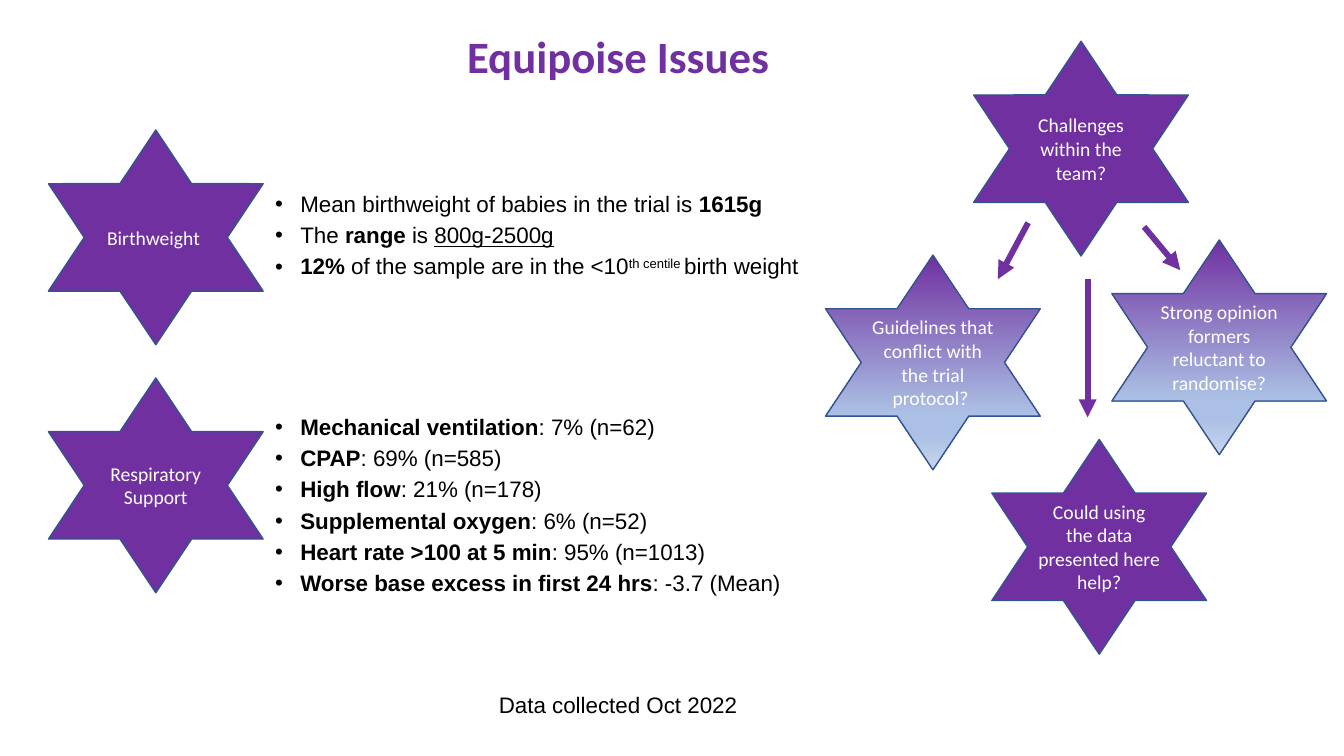
import lxml.etree
import pptx
import pptx.dml.color
import pptx.enum.dml
import pptx.enum.shapes
import pptx.enum.text
import pptx.oxml
import pptx.oxml.ns
import pptx.util

Pt = pptx.util.Pt
RGBColor = pptx.dml.color.RGBColor
qn = pptx.oxml.ns.qn
ALIGN = pptx.enum.text.PP_ALIGN

PURPLE = RGBColor(0x70, 0x30, 0xA0)
PALE_BLUE = RGBColor(0xAB, 0xC0, 0xE4)
PALEST_BLUE = RGBColor(0xC7, 0xD5, 0xED)
OUTLINE = RGBColor(0x32, 0x54, 0x91)
WHITE = RGBColor(0xFF, 0xFF, 0xFF)
BLACK = RGBColor(0, 0, 0)

FADE = [(0, PURPLE), (74, PALE_BLUE), (83, PALE_BLUE), (100, PALEST_BLUE)]
STAR_SIZE = 153.4

# Star label, left, top, faded fill
STARS = [
    ("Birthweight ", 34.6, 92.9, False),
    ("Respiratory Support", 34.6, 270, False),
    ("Challenges within the team?", 695.5, 29.5, False),
    ("Guidelines that conflict with the trial protocol? ", 589.7, 182.2, True),
    ("Strong opinion formers reluctant to randomise?", 794.2, 171.4, True),
    ("Could using the data presented here help?", 708.5, 313.9, False),
]

# Arrow start and end
ARROWS = [
    (734.4, 159.1, 712.8, 199.4),
    (817.2, 162, 843.1, 193),
    (776.9, 199.4, 776.9, 298.1),
]

# Each bullet is a list of (text, style) pieces
BIRTHWEIGHT_FACTS = [
    [("Mean birthweight of babies in the trial is ", ""), ("1615g", "bold")],
    [("The ", ""), ("range", "bold"), (" is ", ""), ("800g-2500g", "underline")],
    [("12% ", "bold"), ("of the sample are in the <10", ""),
     ("th centile ", "superscript"), ("birth weight", "")],
]
RESPIRATORY_FACTS = [
    [(measure, "bold"), (": " + result, "")]
    for measure, result in [
        ("Mechanical ventilation", "7% (n=62)"),
        ("CPAP", "69% (n=585)"),
        ("High flow", "21% (n=178)"),
        ("Supplemental oxygen", "6% (n=52)"),
        ("Heart rate >100 at 5 min", "95% (n=1013)"),
        ("Worse base excess in first 24 hrs", "-3.7 (Mean)"),
    ]
]


def format_font(font, name, size, color, bold=False):
    font.name = name
    font.size = Pt(size)
    font.color.rgb = color
    font.bold = bold


def add_text_frame(slide, left, top, width, height):
    box = slide.shapes.add_textbox(Pt(left), Pt(top), Pt(width), Pt(height))
    box.text_frame.word_wrap = True
    return box.text_frame


def add_line_of_text(slide, place, text, name, size, color, bold=False,
                     align=ALIGN.LEFT):
    frame = add_text_frame(slide, *place)
    frame.text = text
    paragraph = frame.paragraphs[0]
    paragraph.alignment = align
    format_font(paragraph.runs[0].font, name, size, color, bold)
    return paragraph


def fade_fill(fill):
    fill.gradient()
    fill.gradient_angle = 270  # top to bottom
    stops = fill._xPr.find(qn("a:gradFill")).find(qn("a:gsLst"))
    for stop in list(stops):
        stops.remove(stop)
    for percent, color in FADE:
        stop = lxml.etree.SubElement(stops, qn("a:gs"), pos=str(percent * 1000))
        lxml.etree.SubElement(stop, qn("a:srgbClr"), val=str(color))


def add_star(slide, label, left, top, faded):
    star = slide.shapes.add_shape(
        pptx.enum.shapes.MSO_SHAPE.STAR_6_POINT,
        Pt(left), Pt(top), Pt(STAR_SIZE), Pt(STAR_SIZE))
    star.shadow.inherit = False
    if faded:
        fade_fill(star.fill)
    else:
        star.fill.solid()
        star.fill.fore_color.rgb = PURPLE
    star.line.color.rgb = OUTLINE
    star.line.width = Pt(1)
    frame = star.text_frame
    frame.word_wrap = True
    frame.vertical_anchor = pptx.enum.text.MSO_ANCHOR.MIDDLE
    frame.text = label
    frame.paragraphs[0].alignment = ALIGN.CENTER
    format_font(frame.paragraphs[0].runs[0].font, "Calibri", 14, WHITE)


def add_arrow(slide, *ends):
    arrow = slide.shapes.add_connector(
        pptx.enum.shapes.MSO_CONNECTOR.STRAIGHT, *[Pt(end) for end in ends])
    arrow.line.color.rgb = PURPLE
    arrow.line.width = Pt(4.25)
    lxml.etree.SubElement(arrow.line._get_or_add_ln(), qn("a:tailEnd"),
                          type="triangle")
    lxml.etree.SubElement(arrow._element.spPr, qn("a:effectLst"))


def add_bullets(slide, place, facts):
    frame = add_text_frame(slide, *place)
    for index, pieces in enumerate(facts):
        paragraph = frame.add_paragraph() if index else frame.paragraphs[0]
        paragraph.line_spacing = 0.9
        paragraph.space_before = Pt(5 if index else 0)
        properties = paragraph._p.get_or_add_pPr()
        properties.set("marL", str(Pt(54)))
        properties.set("indent", str(Pt(-18)))
        lxml.etree.SubElement(properties, qn("a:buFont"), typeface="Arial")
        lxml.etree.SubElement(properties, qn("a:buChar"), char="•")
        for text, style in pieces:
            run = paragraph.add_run()
            run.text = text
            format_font(run.font, "Arial", 16, BLACK, style == "bold")
            if style == "underline":
                run.font.underline = True
            elif style == "superscript":
                run._r.get_or_add_rPr().set("baseline", "30000")


def main():
    deck = pptx.Presentation()
    deck.slide_width = Pt(960)
    deck.slide_height = Pt(540)
    slide = deck.slides.add_slide(deck.slide_layouts[6])

    # Title
    add_line_of_text(slide, (0, 17.3, 890.6, 46), "Equipoise Issues ",
                     "Calibri", 32, PURPLE, True, ALIGN.CENTER)

    # Trial facts
    add_bullets(slide, (153.4, 134.6, 464.4, 84.2), BIRTHWEIGHT_FACTS)
    add_bullets(slide, (153.4, 293.8, 563, 157.7), RESPIRATORY_FACTS)

    # Topics and challenges
    for star in STARS:
        add_star(slide, *star)
    for arrow in ARROWS:
        add_arrow(slide, *arrow)

    # Collection date
    date = add_line_of_text(slide, (313.2, 493.9, 243.4, 23),
                            "Data collected Oct 2022", "Arial", 16, BLACK)
    date.line_spacing = 0.8
    date._p.get_or_add_pPr().set("marL", str(Pt(36)))

    deck.save("out.pptx")


if __name__ == "__main__":
    main()
